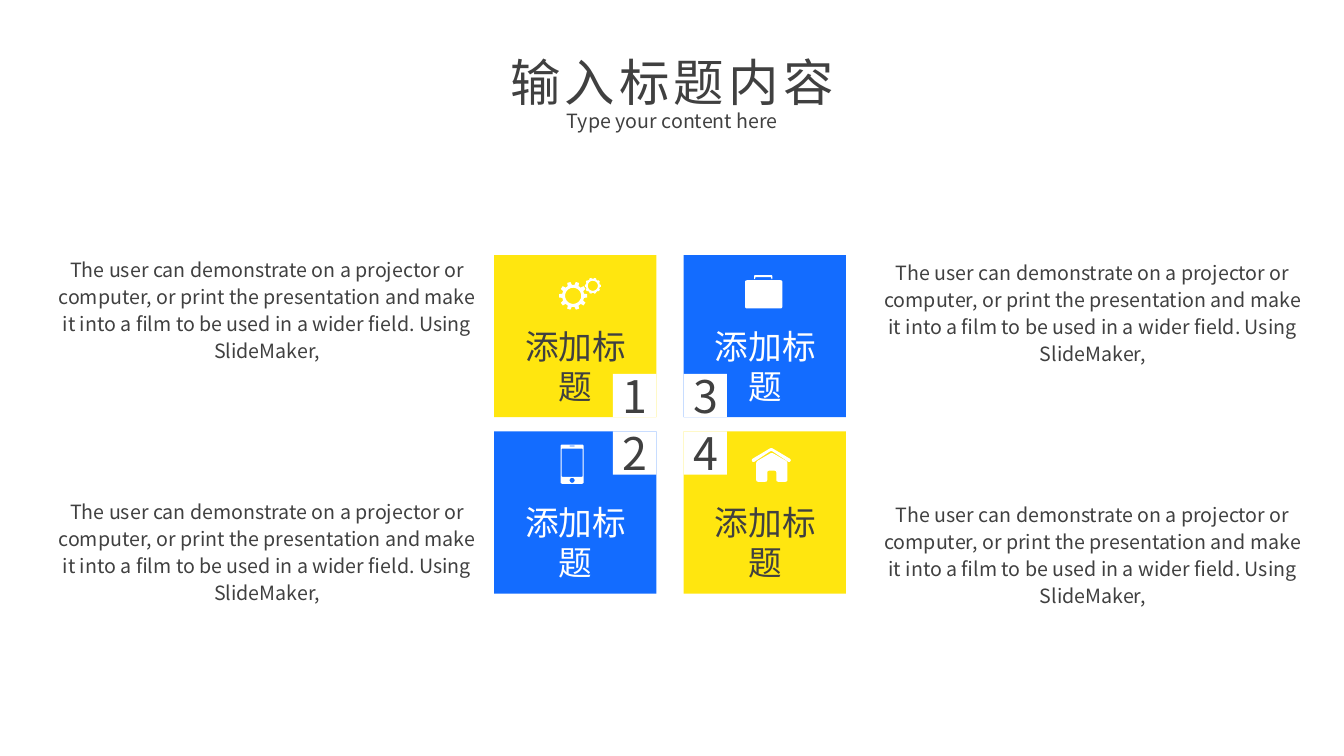
from math import cos, pi, sin

from lxml import etree
from pptx import Presentation
from pptx.dml.color import RGBColor
from pptx.enum.shapes import MSO_SHAPE
from pptx.enum.text import MSO_ANCHOR, MSO_AUTO_SIZE, PP_ALIGN
from pptx.oxml.ns import qn
from pptx.util import Inches, Pt

RECTANGLE = MSO_SHAPE.RECTANGLE
CENTER = PP_ALIGN.CENTER
MIDDLE = MSO_ANCHOR.MIDDLE
GROW = MSO_AUTO_SIZE.SHAPE_TO_FIT_TEXT

COLORS = {"ink": "404040", "white": "FFFFFF", "yellow": "FFE60F", "blue": "136CFF"}
FONT = "Noto Sans CJK SC"
LABEL = "添加标题"
DESCRIPTION = (
    "The user can demonstrate on a projector or computer, or print the "
    "presentation and make it into a film to be used in a wider field. "
    "Using SlideMaker,"
)
DESCRIPTION_FRAME = {
    "margin_left": Inches(0.05), "margin_right": Inches(0.05),
    "margin_top": Inches(0.03), "margin_bottom": Inches(0.03),
}

TILE = 1.61
BADGE = 0.43
TILE_LEFT, TILE_TOP = 4.9, 2.53
COLUMN_STEP, ROW_STEP = 1.88, 1.75
DESCRIPTION_ORIGINS = [(0.5, 2.5), (8.69, 2.53)]
DESCRIPTION_STEP = 2.4


def rgb(color):
    return RGBColor.from_string(COLORS[color])


def write(shape, text, size, color="ink", spacing=None, tracking=None, **frame_format):
    """Put one centred paragraph in a shape, with text frame settings by name."""
    frame = shape.text_frame
    for setting, value in frame_format.items():
        setattr(frame, setting, value)
    paragraph = frame.paragraphs[0]
    paragraph.alignment = CENTER
    if spacing:
        paragraph.line_spacing = spacing
    run = paragraph.add_run()
    run.text = text
    run.font.size = Pt(size)
    run.font.name = FONT
    run.font.color.rgb = rgb(color)
    properties = run.font._element
    etree.SubElement(properties, qn("a:ea")).set("typeface", FONT)
    if tracking:
        properties.set("spc", str(tracking * 100))


def add_text(slide, box, text, size, **style):
    holder = slide.shapes.add_textbox(*map(Inches, box))
    write(holder, text, size, **{"word_wrap": True, "auto_size": GROW, **style})


def paint(shape, color):
    shape.shadow.inherit = False
    shape.fill.solid()
    shape.fill.fore_color.rgb = rgb(color)
    shape.line.fill.background()


def add_square(slide, left, top, side, color):
    square = slide.shapes.add_shape(RECTANGLE, *map(Inches, (left, top, side, side)))
    paint(square, color)
    return square


def circle(x, y, radius, count=32):
    return [(x + radius * cos(2 * pi * i / count), y + radius * sin(2 * pi * i / count))
            for i in range(count)]


def rounded(corners, radius):
    """Replace each corner by a short quadratic curve."""
    points = []
    for i, (x, y) in enumerate(corners):
        ends = []
        for nx, ny in (corners[i - 1], corners[(i + 1) % len(corners)]):
            length = ((nx - x) ** 2 + (ny - y) ** 2) ** 0.5
            share = min(radius / length, 0.5)
            ends.append((x + (nx - x) * share, y + (ny - y) * share))
        (ax, ay), (bx, by) = ends
        for t in (0, 0.25, 0.5, 0.75, 1):
            a, c, b = (1 - t) ** 2, 2 * t * (1 - t), t * t
            points.append((a * ax + c * x + b * bx, a * ay + c * y + b * by))
    return points


def panel(left, top, width, height, radius):
    right, bottom = left + width, top + height
    return rounded([(left, top), (right, top), (right, bottom), (left, bottom)], radius)


def gear(x, y, outer, root, hole, teeth=10):
    """Contours of a toothed wheel and its round hole."""
    rim = []
    for tooth in range(teeth):
        middle = 2 * pi * tooth / teeth
        for radius, turn in ((root, -0.19), (outer, -0.12), (outer, 0.12), (root, 0.19)):
            angle = middle + turn
            rim.append((x + radius * cos(angle), y + radius * sin(angle)))
    return [rim, circle(x, y, hole)]


def gears():
    return [gear(0.785, 0.405, 0.14, 0.11, 0.08), gear(0.98, 0.305, 0.08, 0.07, 0.05)]


def briefcase():
    handle = [(0.7, 0.24), (0.7, 0.2), (0.88, 0.2), (0.88, 0.24),
              (0.87, 0.24), (0.87, 0.22), (0.71, 0.22), (0.71, 0.24)]
    return [[panel(0.61, 0.25, 0.37, 0.28, 0.02)], [rounded(handle, 0.01)]]


def phone():
    return [[panel(0.66, 0.13, 0.23, 0.39, 0.02), panel(0.75, 0.14, 0.05, 0.01, 0.005),
             circle(0.775, 0.485, 0.025), panel(0.67, 0.17, 0.21, 0.28, 0.01)]]


def house():
    walls = [(0.72, 0.3), (0.875, 0.21), (1.03, 0.3), (1.03, 0.5), (0.92, 0.5),
             (0.92, 0.39), (0.83, 0.39), (0.83, 0.5), (0.72, 0.5)]
    roof = [(0.67, 0.28), (0.87, 0.16), (1.07, 0.28), (1.05, 0.31),
            (0.87, 0.19), (0.69, 0.31)]
    return [[rounded(walls, 0.02)], [rounded(roof, 0.02)]]


def add_icon(slide, left, top, pieces):
    for contours in pieces:
        outlines = [[(Inches(left + x), Inches(top + y)) for x, y in contour]
                    for contour in contours]
        builder = slide.shapes.build_freeform(*outlines[0][0], scale=1.0)
        for i, outline in enumerate(outlines):
            if i:
                builder.move_to(*outline[0])
            builder.add_line_segments(outline[1:], close=True)
        paint(builder.convert_to_shape(), "white")


def add_heading(slide, left, top, width):
    add_text(slide, (left, top + 0.57, width, 0.34), "Type your content here", 14)
    add_text(slide, (left + 0.73, top, 3.45, 0.71), "输入标题内容", 36,
             tracking=3, word_wrap=False)


def add_tile(slide, column, row, number, fill, ink, icon):
    """Coloured square whose number sits at the corner nearest the grid centre."""
    left = TILE_LEFT + column * COLUMN_STEP
    top = TILE_TOP + row * ROW_STEP
    add_square(slide, left, top, TILE, fill)
    inset = TILE - BADGE
    badge = add_square(slide, left + (1 - column) * inset, top + (1 - row) * inset,
                       BADGE, "white")
    write(badge, number, 32, vertical_anchor=MIDDLE)
    add_text(slide, (left + 0.21, top + 0.65, 1.2, 0.5), LABEL, 24, color=ink)
    add_icon(slide, left, top, icon())


def add_descriptions(slide, left, top):
    for row in range(2):
        add_text(slide, (left, top + row * DESCRIPTION_STEP, 4.3, 1.12), DESCRIPTION, 14,
                 spacing=1.14, **DESCRIPTION_FRAME)


def main():
    deck = Presentation()
    deck.slide_width, deck.slide_height = Inches(13.33), Inches(7.5)
    slide = deck.slides.add_slide(deck.slide_layouts[6])
    add_heading(slide, 4.21, 0.46, 4.92)
    tiles = [
        (0, 0, "1", "yellow", "ink", gears),
        (1, 0, "3", "blue", "white", briefcase),
        (0, 1, "2", "blue", "white", phone),
        (1, 1, "4", "yellow", "ink", house),
    ]
    for tile in tiles:
        add_tile(slide, *tile)
    for left, top in DESCRIPTION_ORIGINS:
        add_descriptions(slide, left, top)
    deck.save("out.pptx")


if __name__ == "__main__":
    main()
